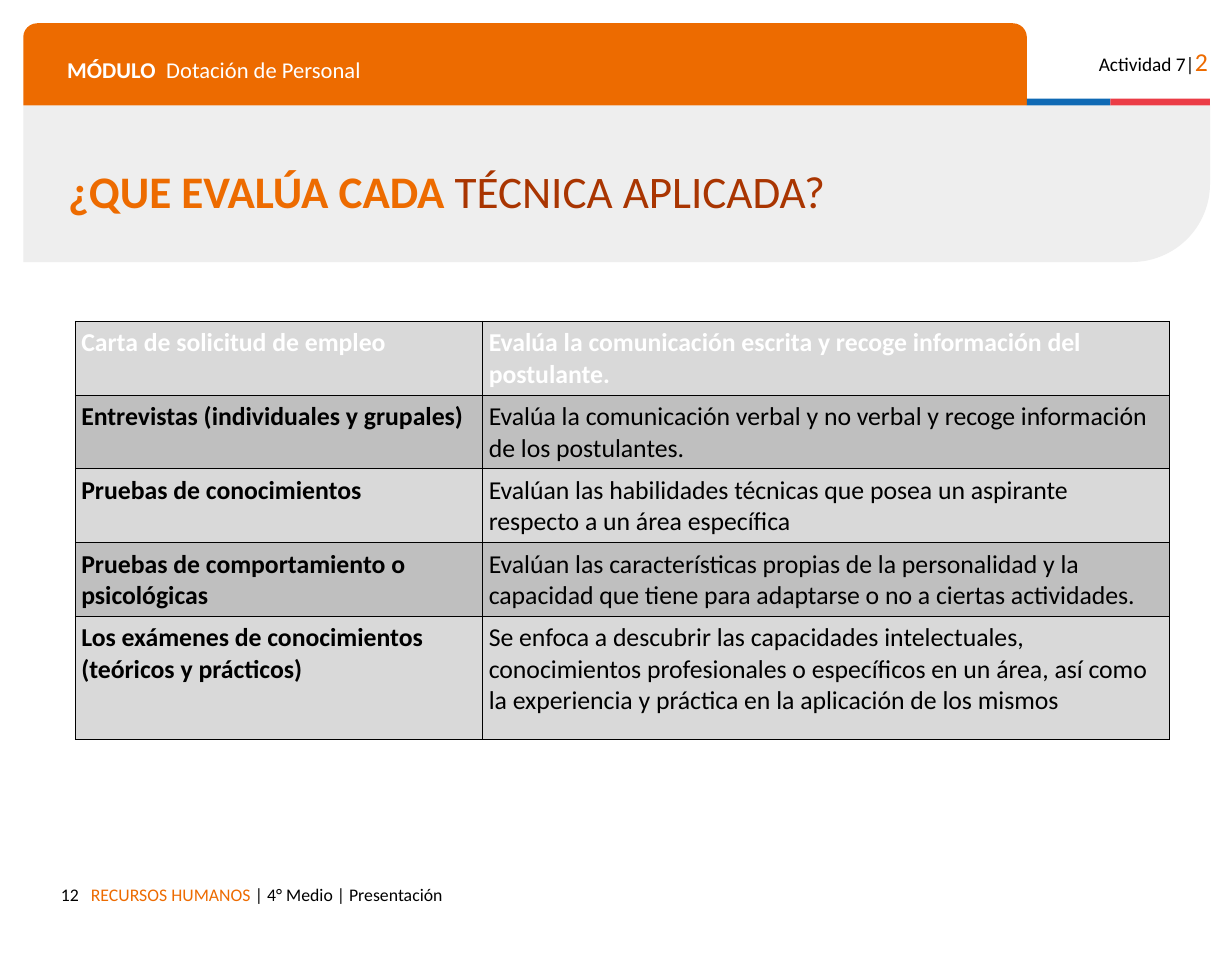
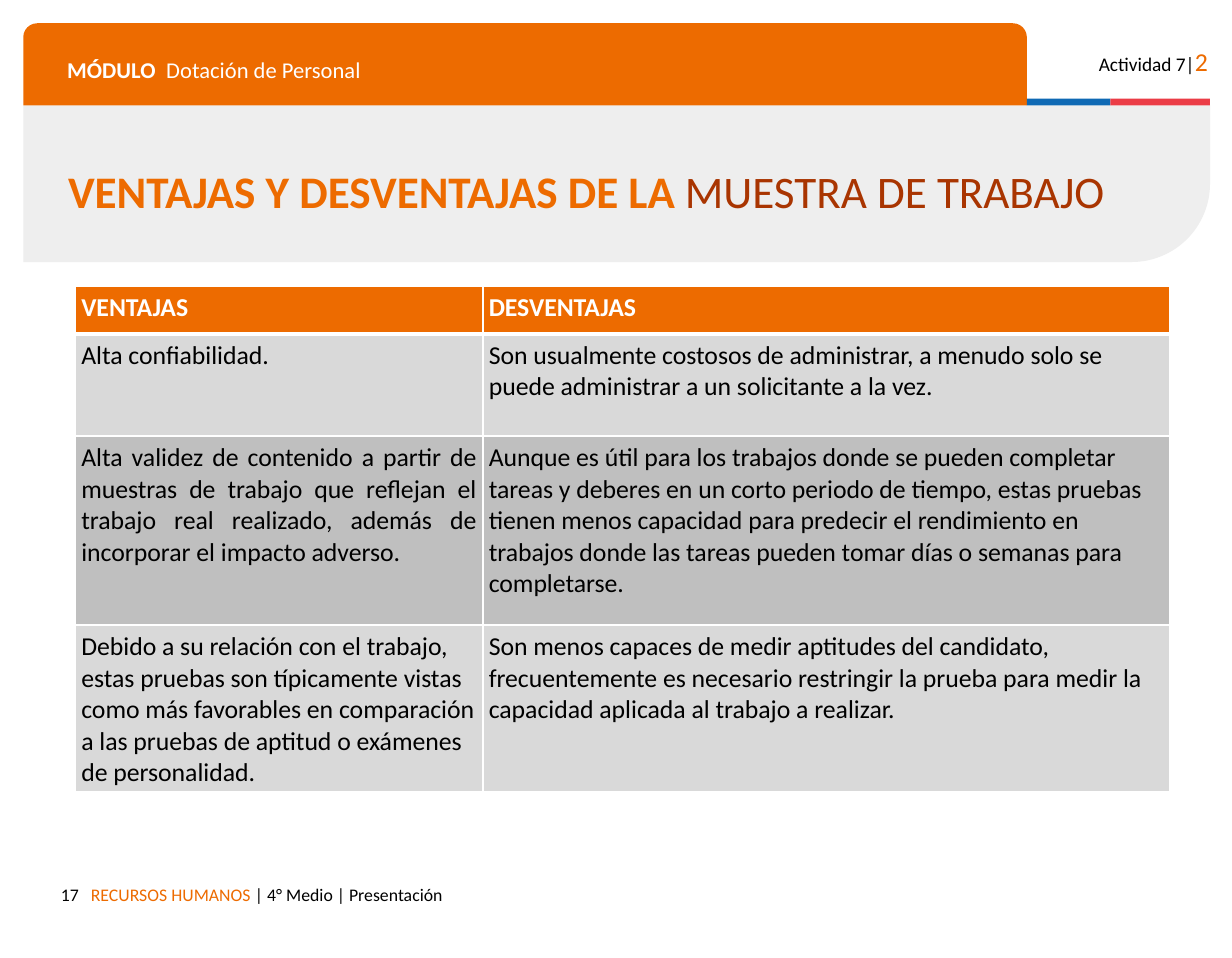
import dataclasses

import lxml.etree
import pptx
import pptx.dml.color
import pptx.enum.shapes
import pptx.enum.text
import pptx.oxml.ns
import pptx.util

Cm = pptx.util.Cm
Pt = pptx.util.Pt
SHAPE = pptx.enum.shapes.MSO_SHAPE
ALIGN = pptx.enum.text.PP_ALIGN
qualified = pptx.oxml.ns.qn


@dataclasses.dataclass(frozen=True)
class Theme:
    font: str = "Calibri"
    orange: str = "ED6B00"
    rust: str = "A93501"
    blue: str = "0F69B4"
    red: str = "EB3C46"
    pale: str = "EEEEEE"
    light_row: str = "D9D9D9"
    dark_row: str = "BFBFBF"
    white: str = "FFFFFF"
    black: str = "000000"
    title_size: int = 28
    table_size: int = 16
    module_size: int = 14
    activity_size: int = 12
    activity_number_size: int = 16
    footer_size: int = 11


THEME = Theme()


def rgb(color):
    return pptx.dml.color.RGBColor.from_string(color)


def write_runs(paragraph, runs, align=ALIGN.LEFT):
    paragraph.alignment = align
    for text, size, color, bold in runs:
        run = paragraph.add_run()
        run.text = text
        run.font.name = THEME.font
        run.font.size = Pt(size)
        run.font.bold = bold
        run.font.color.rgb = rgb(color)


def set_margins(target, margin):
    target.margin_left = target.margin_right = Cm(margin)
    target.margin_top = target.margin_bottom = Cm(margin)


def add_text(slide, box, runs, align=ALIGN.LEFT, tab=None):
    shape = slide.shapes.add_textbox(*map(Cm, box))
    frame = shape.text_frame
    frame.word_wrap = True
    set_margins(frame, 0.25)
    paragraph = frame.paragraphs[0]
    if tab:
        properties = paragraph._p.get_or_add_pPr()
        tabs = lxml.etree.SubElement(properties, qualified("a:tabLst"))
        lxml.etree.SubElement(tabs, qualified("a:tab"), pos=str(Cm(tab)), algn="l")
    write_runs(paragraph, runs, align)
    return shape


def add_band(slide, preset, box, color, adjustments=()):
    shape = slide.shapes.add_shape(preset, *map(Cm, box))
    shape.shadow.inherit = False
    shape.fill.solid()
    shape.fill.fore_color.rgb = rgb(color)
    shape.line.fill.background()
    for index, value in enumerate(adjustments):
        shape.adjustments[index] = value
    return shape


def build_layout(layout, slide):
    for placeholder in list(layout.placeholders):
        if placeholder.placeholder_format.type != pptx.enum.shapes.PP_PLACEHOLDER.TITLE:
            layout.shapes.element.remove(placeholder.element)

    title_band = add_band(slide, SHAPE.ROUND_1_RECTANGLE,
                          (0.51, 2.31, 25.98, 3.43), THEME.pale, (0.5,))
    title_band.element.spPr.find(qualified("a:xfrm")).set("flipV", "1")
    shapes = [
        title_band,
        add_band(slide, SHAPE.ROUND_2_SAME_RECTANGLE,
                 (0.51, 0.51, 21.97, 1.8), THEME.orange, (0.17, 0)),
        add_band(slide, SHAPE.RECTANGLE, (22.48, 2.16, 1.83, 0.15), THEME.blue),
        add_band(slide, SHAPE.RECTANGLE, (24.31, 2.16, 2.18, 0.15), THEME.red),
        add_text(slide, (23.44, 0.76, 3.25, 1.09), [
            ("Actividad 7|", THEME.activity_size, THEME.black, False),
            ("2", THEME.activity_number_size, THEME.orange, False)], ALIGN.RIGHT),
        add_text(slide, (1.22, 0.97, 20.68, 1.04), [
            ("MÓDULO\t", THEME.module_size, THEME.white, True),
            ("Dotación de Personal", THEME.module_size, THEME.white, False)], tab=2.17),
        add_text(slide, (1.74, 19.13, 18.15, 0.89), [
            ("RECURSOS HUMANOS ", THEME.footer_size, THEME.orange, False),
            ("| 4° Medio | Presentación", THEME.footer_size, THEME.black, False)]),
    ]
    for shape in shapes:
        layout.shapes.element.append(shape.element)


def set_title(slide, strong, rest):
    title = slide.shapes.title
    title.left, title.top, title.width, title.height = map(Cm, (1.24, 3.53, 24.87, 1.5))
    frame = title.text_frame
    frame.auto_size = pptx.enum.text.MSO_AUTO_SIZE.NONE
    frame.vertical_anchor = pptx.enum.text.MSO_ANCHOR.MIDDLE
    set_margins(frame, 0.25)
    frame.paragraphs[0].line_spacing = 0.8
    write_runs(frame.paragraphs[0], [
        (strong, THEME.title_size, THEME.orange, True),
        (rest, THEME.title_size, THEME.rust, False)])


def add_page_number(slide, number):
    add_text(slide, (1.04, 19.13, 0.94, 0.89),
             [(str(number), THEME.footer_size, THEME.black, False)], ALIGN.RIGHT)


def set_borders(cell, color, widths):
    properties = cell._tc.get_or_add_tcPr()
    for side, width in zip("LRTB", widths):
        line = lxml.etree.SubElement(properties, qualified(f"a:ln{side}"), w=str(Pt(width)))
        fill = lxml.etree.SubElement(line, qualified("a:solidFill"))
        lxml.etree.SubElement(fill, qualified("a:srgbClr"), val=color)


def add_comparison(slide, top, rows, heights, header_fill, row_fills, border, border_width,
                   header_line, bold_labels=False, justified=()):
    widths = (8.92, 15.04)
    table = slide.shapes.add_table(len(rows), len(widths), Cm(1.65), Cm(top),
                                   Cm(sum(widths)), Cm(sum(heights))).table
    table.horz_banding = False
    for column, width in zip(table.columns, widths):
        column.width = Cm(width)
    for row_index, (texts, height) in enumerate(zip(rows, heights)):
        table.rows[row_index].height = Cm(height)
        header = row_index == 0
        fill = header_fill if header else row_fills[(row_index - 1) % 2]
        color = THEME.white if header else THEME.black
        above = header_line if row_index == 1 else border_width
        below = header_line if header else border_width
        for column_index, text in enumerate(texts):
            cell = table.cell(row_index, column_index)
            set_margins(cell, 0.13)
            set_borders(cell, border, (border_width, border_width, above, below))
            cell.fill.solid()
            cell.fill.fore_color.rgb = rgb(fill)
            bold = header or (bold_labels and column_index == 0)
            align = ALIGN.JUSTIFY if (row_index, column_index) in justified else ALIGN.LEFT
            write_runs(cell.text_frame.paragraphs[0],
                       [(text, THEME.table_size, color, bold)], align)


TECHNIQUES = [
    ("Carta de solicitud de empleo",
     "Evalúa la comunicación escrita y recoge información del postulante."),
    ("Entrevistas (individuales y grupales)",
     "Evalúa la comunicación verbal y no verbal y recoge información de los postulantes."),
    ("Pruebas de conocimientos",
     "Evalúan las habilidades técnicas que posea un aspirante respecto a un área específica"),
    ("Pruebas de comportamiento o psicológicas",
     "Evalúan las características propias de la personalidad y la capacidad que tiene para "
     "adaptarse o no a ciertas actividades."),
    ("Los exámenes de conocimientos (teóricos y prácticos)",
     "Se enfoca a descubrir las capacidades intelectuales, conocimientos profesionales o "
     "específicos en un área, así como la experiencia y práctica en la aplicación de los mismos"),
]

WORK_SAMPLE = [
    ("VENTAJAS", "DESVENTAJAS"),
    ("Alta confiabilidad.",
     "Son usualmente costosos de administrar, a menudo solo se puede administrar a un "
     "solicitante a la vez."),
    ("Alta validez de contenido a partir de muestras de trabajo que reflejan el trabajo real "
     "realizado, además de incorporar el impacto adverso.",
     "Aunque es útil para los trabajos donde se pueden completar tareas y deberes en un corto "
     "periodo de tiempo, estas pruebas tienen menos capacidad para predecir el rendimiento en "
     "trabajos donde las tareas pueden tomar días o semanas para completarse."),
    ("Debido a su relación con el trabajo, estas pruebas son típicamente vistas como más "
     "favorables en comparación a las pruebas de aptitud o exámenes de personalidad.",
     "Son menos capaces de medir aptitudes del candidato, frecuentemente es necesario "
     "restringir la prueba para medir la capacidad aplicada al trabajo a realizar."),
]


def main():
    presentation = pptx.Presentation()
    presentation.slide_width = Cm(26.97)
    presentation.slide_height = Cm(20.98)
    layout = presentation.slide_layouts.get_by_name("Title Only")

    techniques = presentation.slides.add_slide(layout)
    build_layout(layout, techniques)
    add_page_number(techniques, 12)
    set_title(techniques, "¿QUE EVALÚA CADA ", "TÉCNICA APLICADA?")
    add_comparison(techniques, 7.04, TECHNIQUES, (1.61, 1.61, 1.61, 1.61, 2.69),
                   THEME.light_row, (THEME.dark_row, THEME.light_row),
                   THEME.black, 0.75, 0.75, bold_labels=True)

    work_sample = presentation.slides.add_slide(layout)
    add_page_number(work_sample, 17)
    set_title(work_sample, "VENTAJAS Y DESVENTAJAS DE LA ", "MUESTRA DE TRABAJO")
    add_comparison(work_sample, 6.27, WORK_SAMPLE, (1.04, 2.24, 4.14, 3.63),
                   THEME.orange, (THEME.light_row, THEME.dark_row),
                   THEME.white, 1, 3, justified={(1, 0), (2, 0)})

    presentation.save("out.pptx")


if __name__ == "__main__":
    main()
